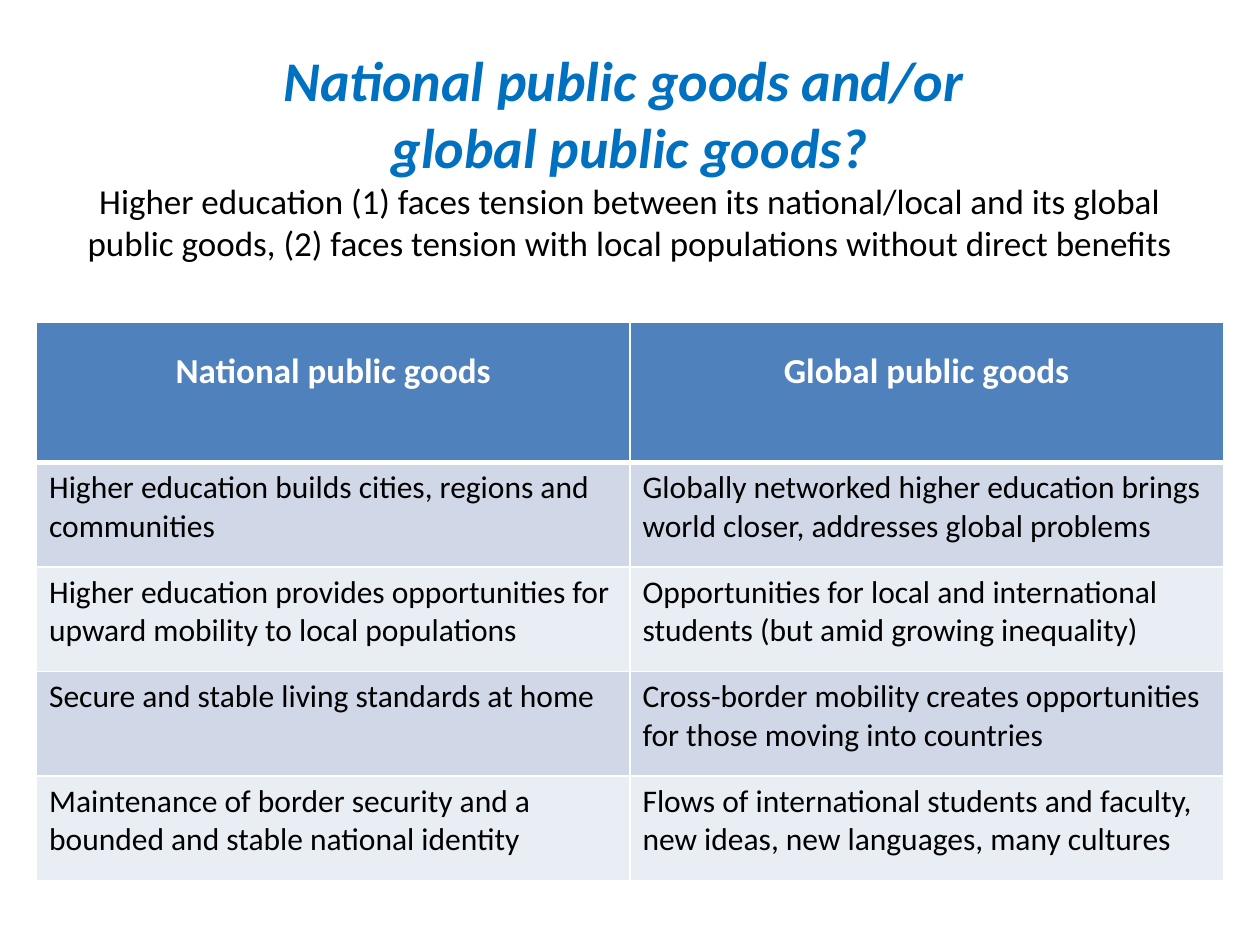
from lxml.etree import SubElement
from pptx import Presentation
from pptx.dml.color import RGBColor as RGB
from pptx.enum.text import MSO_ANCHOR as ANCHOR, MSO_AUTO_SIZE as AUTO, PP_ALIGN as ALIGN
from pptx.oxml.ns import qn
from pptx.util import Inches, Pt

COLORS = {
    "title": "0070C0", "text": "000000", "white": "FFFFFF",
    "header": "4F81BD", "odd": "D0D8E8", "even": "E9EDF4",
}
TITLE = ["National public goods and/or ", "global public goods?"]
SUBTITLE = ("Higher education (1) faces tension between its national/local and its global "
            "public goods, (2) faces tension with local populations without direct benefits")
ROWS = [
    ("National public goods", "Global public goods"),
    ("Higher education builds cities, regions and communities",
     "Globally networked higher education brings world closer, addresses global problems"),
    ("Higher education provides opportunities for upward mobility to local populations",
     "Opportunities for local and international students (but amid growing inequality)"),
    ("Secure and stable living standards at home",
     "Cross-border mobility creates opportunities for those moving into countries"),
    ("Maintenance of border security and a bounded and stable national identity",
     "Flows of international students and faculty, new ideas, new languages, many cultures"),
]


def add_text(p, text, size=18, color="text", bold=False, italic=False):
    """Append a formatted run to a paragraph."""
    r = p.add_run()
    r.text = text
    r.font.name = "Calibri"
    r.font.size = Pt(size)
    r.font.bold = bold
    r.font.italic = italic
    r.font.color.rgb = RGB.from_string(COLORS[color])


def set_borders(cell, top=1, bottom=1):
    """Give a cell white borders with widths in points."""
    tcPr = cell._tc.get_or_add_tcPr()
    for tag, width in (("lnL", 1), ("lnR", 1), ("lnT", top), ("lnB", bottom)):
        ln = SubElement(tcPr, qn(f"a:{tag}"), w=str(Pt(width)))
        fill = SubElement(ln, qn("a:solidFill"))
        SubElement(fill, qn("a:srgbClr"), val=COLORS["white"])


def fill_title(sp):
    """Place the title placeholder and write the heading and its explanation."""
    sp.left, sp.top, sp.width, sp.height = map(Inches, (0.5, 0.3, 9, 1.85))
    tf = sp.text_frame
    tf.word_wrap = True
    tf.auto_size = AUTO.NONE
    tf.vertical_anchor = ANCHOR.MIDDLE
    p = tf.paragraphs[0]
    p.alignment = ALIGN.CENTER
    for line in TITLE:
        add_text(p, line, size=32, color="title", bold=True, italic=True)
        p.add_line_break()
    add_text(p, SUBTITLE, size=20)


def fill_cell(cell, text, row):
    """Write and style one cell according to its row."""
    header = row == 0
    set_borders(cell, top=3 if row == 1 else 1, bottom=3 if header else 1)
    cell.fill.solid()
    shade = "header" if header else "odd" if row % 2 else "even"
    cell.fill.fore_color.rgb = RGB.from_string(COLORS[shade])
    p = cell.text_frame.paragraphs[0]
    if header:
        p.alignment = ALIGN.CENTER
        p.line_spacing = 1.5
        add_text(p, text, size=20, color="white", bold=True)
    else:
        add_text(p, text)


def add_goods_table(s):
    """Add the table comparing national and global public goods."""
    heights = [1.11] + [0.83] * (len(ROWS) - 1)
    box = map(Inches, (0.29, 2.56, 9.42, sum(heights)))
    table = s.shapes.add_table(len(ROWS), 2, *box).table
    for i, (texts, height) in enumerate(zip(ROWS, heights)):
        table.rows[i].height = Inches(height)
        for j, text in enumerate(texts):
            fill_cell(table.cell(i, j), text, i)


def main():
    """Build and save the slide."""
    prs = Presentation()
    prs.slide_width, prs.slide_height = Inches(10), Inches(7.5)
    s = prs.slides.add_slide(prs.slide_layouts[5])
    fill_title(s.shapes.title)
    add_goods_table(s)
    prs.save("out.pptx")


if __name__ == "__main__":
    main()
